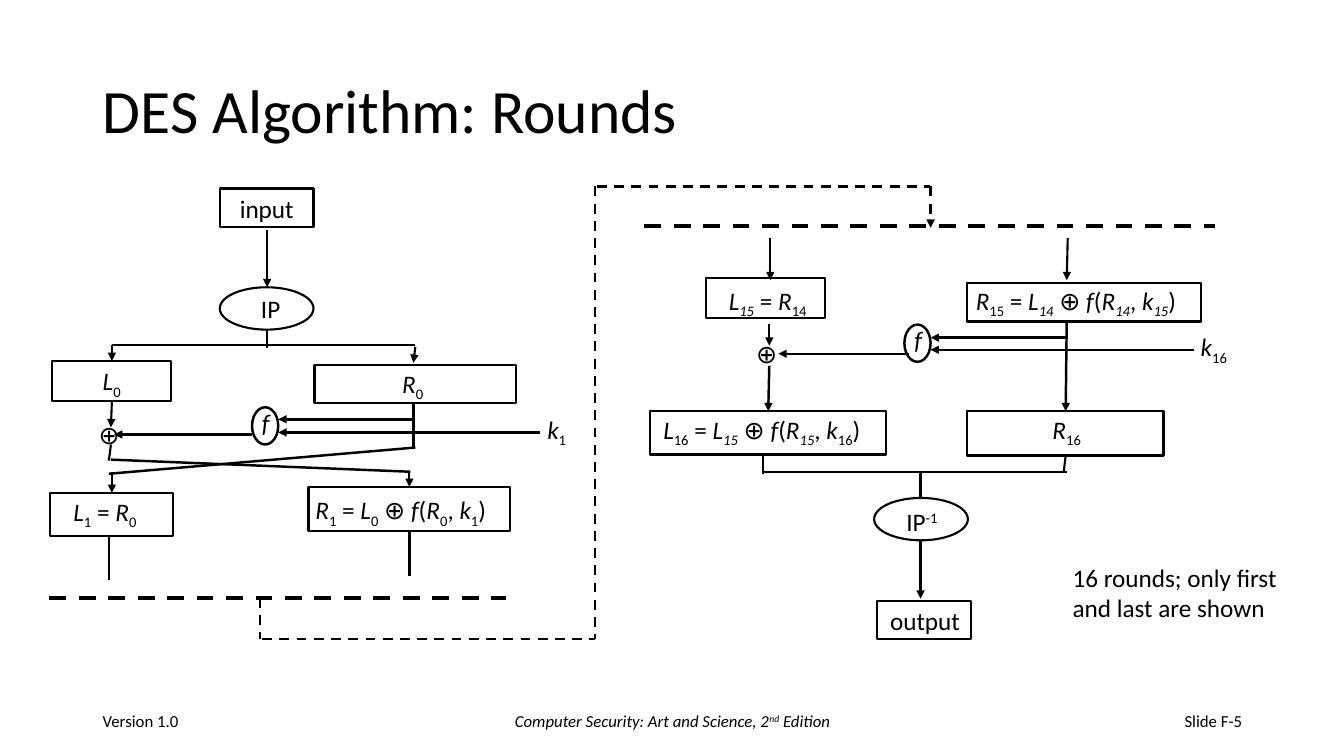
from typing import NamedTuple

from lxml import etree
from pptx import Presentation
from pptx.dml.color import RGBColor
from pptx.enum.dml import MSO_LINE
from pptx.enum.shapes import MSO_CONNECTOR, MSO_SHAPE
from pptx.enum.text import MSO_ANCHOR, MSO_AUTO_SIZE, PP_ALIGN
from pptx.oxml.ns import qn
from pptx.util import Inches, Pt

RECT, OVAL = MSO_SHAPE.RECTANGLE, MSO_SHAPE.OVAL
STRAIGHT, DASH = MSO_CONNECTOR.STRAIGHT, MSO_LINE.DASH
LEFT, CENTER, RIGHT = PP_ALIGN.LEFT, PP_ALIGN.CENTER, PP_ALIGN.RIGHT
TOP, MIDDLE = MSO_ANCHOR.TOP, MSO_ANCHOR.MIDDLE
FIT, NO_FIT = MSO_AUTO_SIZE.SHAPE_TO_FIT_TEXT, MSO_AUTO_SIZE.NONE
FONT, INK = "Calibri", "000000"
THIN, MEDIUM, THICK = 1.5, 1.75, 3
SUB, SUPER = -25, 30


class Run(NamedTuple):
    text: str
    italic: bool = False
    baseline: int = 0


class Outline(NamedTuple):
    kind: MSO_SHAPE
    left: float
    top: float
    width: float
    height: float
    weight: float = THIN


class Label(NamedTuple):
    runs: list[Run]
    left: float
    top: float
    width: float
    height: float = 0.4
    wrap: bool = False
    size: float = 18
    align: PP_ALIGN = LEFT
    anchor: MSO_ANCHOR = TOP
    fit: MSO_AUTO_SIZE = FIT


class Wire(NamedTuple):
    x1: float
    y1: float
    x2: float
    y2: float
    weight: float = THIN
    arrow: bool = False
    dashed: bool = False


def color(hex_code: str) -> RGBColor:
    return RGBColor.from_string(hex_code)


def term(letter: str, index: int, slanted: bool = False) -> list[Run]:
    """A variable with its subscript."""
    return [Run(letter, True), Run(str(index), slanted, SUB)]


def round_formula(result: list[Run], left: list[Run], right: list[Run],
                  key: list[Run]) -> list[Run]:
    """result = left ⊕ f(right, key)"""
    return [*result, Run(" = "), *left, Run(" ⊕ "), Run("f", True), Run("("),
            *right, Run(", "), *key, Run(")")]


def add_runs(paragraph, runs: list[Run], size: float) -> None:
    for part in runs:
        run = paragraph.add_run()
        run.text = part.text
        run.font.name, run.font.size = FONT, Pt(size)
        run.font.italic = part.italic
        run.font.color.rgb = color(INK)
        if part.baseline:
            run.font._element.set("baseline", str(part.baseline * 1000))


def draw_outline(slide, item: Outline) -> None:
    shape = slide.shapes.add_shape(item.kind, Inches(item.left), Inches(item.top),
                                   Inches(item.width), Inches(item.height))
    shape.shadow.inherit = False
    shape.fill.background()
    shape.line.color.rgb = color(INK)
    shape.line.width = Pt(item.weight)


def draw_label(slide, item: Label) -> None:
    box = slide.shapes.add_textbox(Inches(item.left), Inches(item.top),
                                   Inches(item.width), Inches(item.height))
    frame = box.text_frame
    frame.word_wrap, frame.auto_size = item.wrap, item.fit
    frame.vertical_anchor = item.anchor
    frame.paragraphs[0].alignment = item.align
    add_runs(frame.paragraphs[0], item.runs, item.size)


def draw_wire(slide, item: Wire) -> None:
    wire = slide.shapes.add_connector(STRAIGHT, Inches(item.x1), Inches(item.y1),
                                      Inches(item.x2), Inches(item.y2))
    wire.line.color.rgb = color(INK)
    wire.line.width = Pt(item.weight)
    if item.dashed:
        wire.line.dash_style = DASH
    properties = wire._element.spPr
    if item.arrow:
        etree.SubElement(properties.find(qn("a:ln")), qn("a:tailEnd"), type="triangle")
    etree.SubElement(properties, qn("a:effectLst"))


F, XOR = [Run("f", True)], [Run("⊕")]

OUTLINES = [
    # First round
    Outline(RECT, 2.18, 1.87, 0.93, 0.38), Outline(OVAL, 2.18, 2.85, 0.93, 0.42),
    Outline(RECT, 0.52, 3.58, 1.18, 0.4), Outline(RECT, 3.12, 3.62, 2, 0.38),
    Outline(OVAL, 2.5, 4.04, 0.26, 0.37, MEDIUM),
    Outline(RECT, 0.5, 4.89, 1.22, 0.43), Outline(RECT, 3.06, 4.83, 2, 0.44),
    # Last round
    Outline(RECT, 7, 2.76, 1.18, 0.4), Outline(RECT, 9.59, 2.81, 2.32, 0.38),
    Outline(OVAL, 8.97, 3.22, 0.26, 0.37, MEDIUM),
    Outline(RECT, 6.45, 4.08, 2.34, 0.43), Outline(RECT, 9.59, 4.08, 1.95, 0.44),
    Outline(OVAL, 8.67, 4.94, 0.93, 0.42), Outline(RECT, 8.7, 5.96, 0.93, 0.38),
]

WIRES = [
    # Input through the initial permutation to both halves
    Wire(2.65, 2.28, 2.65, 2.85, arrow=True), Wire(2.65, 3.27, 2.65, 3.45),
    Wire(1.11, 3.42, 4.12, 3.42), Wire(1.11, 3.42, 1.11, 3.58, arrow=True),
    Wire(4.12, 3.44, 4.1, 3.6, arrow=True),
    # First round: function, key and swap
    Wire(4.12, 4.16, 2.76, 4.16, MEDIUM, True), Wire(5.36, 4.29, 2.76, 4.29, MEDIUM, True),
    Wire(2.5, 4.31, 1.13, 4.31, MEDIUM, True), Wire(1.11, 3.98, 1.1, 4.24, arrow=True),
    Wire(4.1, 4, 4.1, 4.44, MEDIUM), Wire(4.12, 4.44, 1.08, 4.7, MEDIUM),
    Wire(1.1, 4.41, 1.08, 4.57), Wire(1.1, 4.56, 4.07, 4.68, MEDIUM),
    Wire(4.06, 4.68, 4.06, 4.83, arrow=True), Wire(1.11, 4.68, 1.11, 4.89, arrow=True),
    Wire(4.06, 5.26, 4.06, 5.71, MEDIUM), Wire(1.08, 5.31, 1.08, 5.75, MEDIUM),
    # Omitted rounds
    Wire(0.49, 5.93, 5.02, 5.93, THICK, dashed=True),
    Wire(2.58, 5.93, 2.58, 6.34, MEDIUM, dashed=True),
    Wire(2.6, 6.34, 5.9, 6.34, MEDIUM, dashed=True),
    Wire(5.9, 1.85, 5.9, 6.34, MEDIUM, dashed=True),
    Wire(5.92, 1.85, 9.22, 1.85, MEDIUM, dashed=True),
    Wire(9.23, 1.85, 9.23, 2.26, MEDIUM, True, True),
    Wire(6.39, 2.24, 12.05, 2.24, THICK, dashed=True),
    # Last round: function and key
    Wire(7.64, 2.36, 7.64, 2.78, arrow=True), Wire(10.59, 2.36, 10.58, 2.78, arrow=True),
    Wire(10.59, 3.35, 9.23, 3.35, MEDIUM, True), Wire(11.84, 3.47, 9.23, 3.47, MEDIUM, True),
    Wire(9.02, 3.51, 7.72, 3.51, MEDIUM, True), Wire(7.63, 3.21, 7.63, 3.43, arrow=True),
    Wire(7.63, 3.63, 7.62, 4.08, MEDIUM, True), Wire(10.58, 3.18, 10.57, 4.08, MEDIUM, True),
    # Both halves through the inverse permutation to the output
    Wire(7.57, 4.52, 7.57, 4.7), Wire(10.57, 4.52, 10.55, 4.68),
    Wire(7.57, 4.68, 10.58, 4.68), Wire(9.13, 4.69, 9.13, 4.93),
    Wire(9.13, 5.37, 9.13, 5.94, arrow=True),
]

LABELS = [
    # First round
    Label([Run("input")], 2.28, 1.87, 0.74), Label([Run("IP")], 2.49, 2.86, 0.39),
    Label(term("L", 0), 0.92, 3.58, 0.39), Label(term("R", 0), 3.89, 3.6, 0.42),
    Label(F, 2.5, 3.99, 0.28), Label(XOR, 0.88, 4.11, 0.45),
    Label(term("k", 1), 5.33, 4.06, 0.4),
    Label([*term("L", 1), Run(" = "), *term("R", 0)], 0.63, 4.87, 1, wrap=True),
    Label(round_formula(term("R", 1), term("L", 0), term("R", 0), term("k", 1)),
          3.03, 4.86, 2),
    # Last round
    Label([*term("L", 15, True), Run(" = "), *term("R", 14)], 7.13, 2.78, 1.16, wrap=True),
    Label(round_formula(term("R", 15), term("L", 14, True), term("R", 14, True),
                        term("k", 15, True)), 9.58, 2.78, 2.34),
    Label(F, 8.97, 3.17, 0.28), Label(XOR, 7.4, 3.31, 0.45),
    Label(term("k", 16), 11.81, 3.24, 0.49),
    Label(round_formula(term("L", 16), term("L", 15, True), term("R", 15, True),
                        term("k", 16)), 6.48, 4.06, 2.31),
    Label(term("R", 16), 10.34, 4.06, 0.51),
    Label([Run("IP"), Run("-1", baseline=SUPER)], 8.89, 4.97, 0.52),
    Label([Run("output")], 8.73, 5.96, 0.9),
    Label([Run("16 rounds; only first and last are shown")], 10.54, 5.53, 2.33, 0.71, True),
    # Footer
    Label([Run("Version 1.0")], 0.92, 6.95, 3, 0.4, True, 12, LEFT, MIDDLE, NO_FIT),
    Label([Run("Computer Security: Art and Science, 2", True), Run("nd", True, SUPER),
           Run(" Edition", True)], 4.42, 6.95, 4.5, 0.4, True, 12, CENTER, MIDDLE, NO_FIT),
    Label([Run("Slide F-5")], 9.42, 6.95, 3, 0.4, True, 12, RIGHT, MIDDLE, NO_FIT),
]


def main() -> None:
    deck = Presentation()
    deck.slide_width, deck.slide_height = Inches(13.33), Inches(7.5)
    slide = deck.slides.add_slide(deck.slide_layouts[5])

    # Title
    title = slide.shapes.title
    title.left, title.top = Inches(0.92), Inches(0.4)
    title.width, title.height = Inches(11.5), Inches(1.45)
    title.text_frame.vertical_anchor = MIDDLE
    heading = title.text_frame.paragraphs[0]
    heading.alignment, heading.line_spacing = LEFT, 0.9
    add_runs(heading, [Run("DES Algorithm: Rounds")], 44)

    # Diagram and footer
    for outline in OUTLINES:
        draw_outline(slide, outline)
    for wire in WIRES:
        draw_wire(slide, wire)
    for label in LABELS:
        draw_label(slide, label)
    deck.save("out.pptx")


if __name__ == "__main__":
    main()
